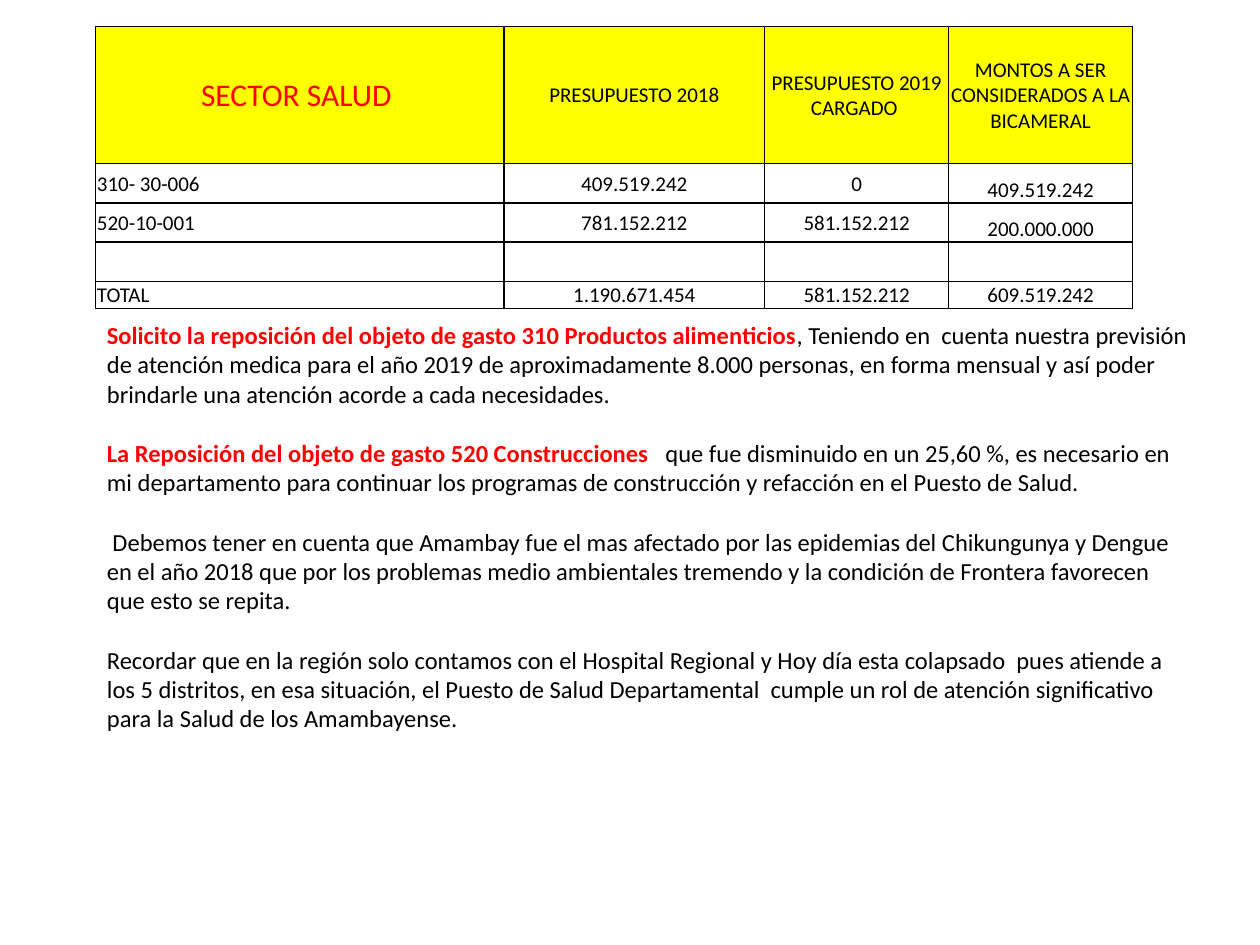
"""Build the health sector budget slide: a table and the reasons for the request."""
from dataclasses import dataclass

from lxml.etree import SubElement
from pptx import Presentation
from pptx.dml.color import RGBColor
from pptx.enum.text import MSO_ANCHOR, PP_ALIGN
from pptx.oxml.ns import qn
from pptx.util import Inches, Pt


@dataclass(frozen=True)
class Theme:
    font: str = "Calibri"
    black: str = "000000"
    red: str = "FF0000"
    yellow: str = "FFFF00"
    title: int = 18
    cell: int = 12
    body: int = 14
    gap: int = 17
    line: int = 1


theme = Theme()


def style(run, size, color, bold=False):
    run.font.name = theme.font
    run.font.size = Pt(size)
    run.font.bold = bold
    run.font.color.rgb = RGBColor.from_string(color)


def border(cell):
    props = cell._tc.get_or_add_tcPr()
    for side in ("a:lnL", "a:lnR", "a:lnT", "a:lnB"):
        line = SubElement(props, qn(side), w=str(Pt(theme.line)))
        fill = SubElement(line, qn("a:solidFill"))
        SubElement(fill, qn("a:srgbClr"), val=theme.black)


rows = [
    ["SECTOR SALUD ", "PRESUPUESTO 2018", "PRESUPUESTO 2019 CARGADO ",
     "MONTOS A SER CONSIDERADOS A LA BICAMERAL"],
    ["310- 30-006", "409.519.242", "0", "409.519.242"],
    ["520-10-001", "781.152.212", "581.152.212", "200.000.000"],
    ["", "", "", ""],
    ["TOTAL", "1.190.671.454", "581.152.212", "609.519.242"],
]
widths = [3.24, 2.07, 1.46, 1.46]
heights = [1.09, 0.31, 0.31, 0.31, 0.21]
reasons = [
    ("Solicito la reposición del objeto de gasto 310 Productos alimenticios",
     ", Teniendo en  cuenta nuestra previsión de atención medica para el año 2019 "
     "de aproximadamente 8.000 personas, en forma mensual y así poder brindarle "
     "una atención acorde a cada necesidades."),
    ("La Reposición del objeto de gasto 520 Construcciones",
     "   que fue disminuido en un 25,60 %, es necesario en mi departamento para "
     "continuar los programas de construcción y refacción en el Puesto de Salud."),
    ("", " Debemos tener en cuenta que Amambay fue el mas afectado por las epidemias "
     "del Chikungunya y Dengue en el año 2018 que por los problemas medio "
     "ambientales tremendo y la condición de Frontera favorecen que esto se repita."),
    ("", "Recordar que en la región solo contamos con el Hospital Regional y Hoy día "
     "esta colapsado  pues atiende a los 5 distritos, en esa situación, el Puesto de "
     "Salud Departamental  cumple un rol de atención significativo para la Salud de "
     "los Amambayense."),
]

deck = Presentation()
deck.slide_width, deck.slide_height = Inches(10), Inches(7.5)
slide = deck.slides.add_slide(deck.slide_layouts[6])

table = slide.shapes.add_table(
    len(rows), len(widths), Inches(0.76), Inches(0.21),
    Inches(sum(widths)), Inches(sum(heights))).table
for col, width in zip(table.columns, widths):
    col.width = Inches(width)
for row, height in zip(table.rows, heights):
    row.height = Inches(height)

for r, texts in enumerate(rows):
    for c, text in enumerate(texts):
        cell = table.cell(r, c)
        cell.margin_left = cell.margin_right = cell.margin_top = Inches(0.01)
        cell.margin_bottom = 0
        low = r > 0 and c == 3
        cell.vertical_anchor = MSO_ANCHOR.BOTTOM if low else MSO_ANCHOR.MIDDLE
        border(cell)
        if r == 0:
            cell.fill.solid()
            cell.fill.fore_color.rgb = RGBColor.from_string(theme.yellow)
        else:
            cell.fill.background()
        cell.text_frame.text = text
        para = cell.text_frame.paragraphs[0]
        para.alignment = PP_ALIGN.LEFT if r > 0 and c == 0 else PP_ALIGN.CENTER
        head = r == 0 and c == 0
        for run in para.runs:
            style(run, theme.title if head else theme.cell,
                  theme.red if head else theme.black)

box = slide.shapes.add_textbox(Inches(0.75), Inches(2.49), Inches(8.82), Inches(3.4))
frame = box.text_frame
frame.word_wrap = True
for i, (lead, rest) in enumerate(reasons):
    para = frame.add_paragraph() if i else frame.paragraphs[0]
    para.space_before = Pt(theme.gap if i else 0)
    for text, color, bold in ((lead, theme.red, True), (rest, theme.black, False)):
        if text:
            run = para.add_run()
            run.text = text
            style(run, theme.body, color, bold)

deck.save("out.pptx")
